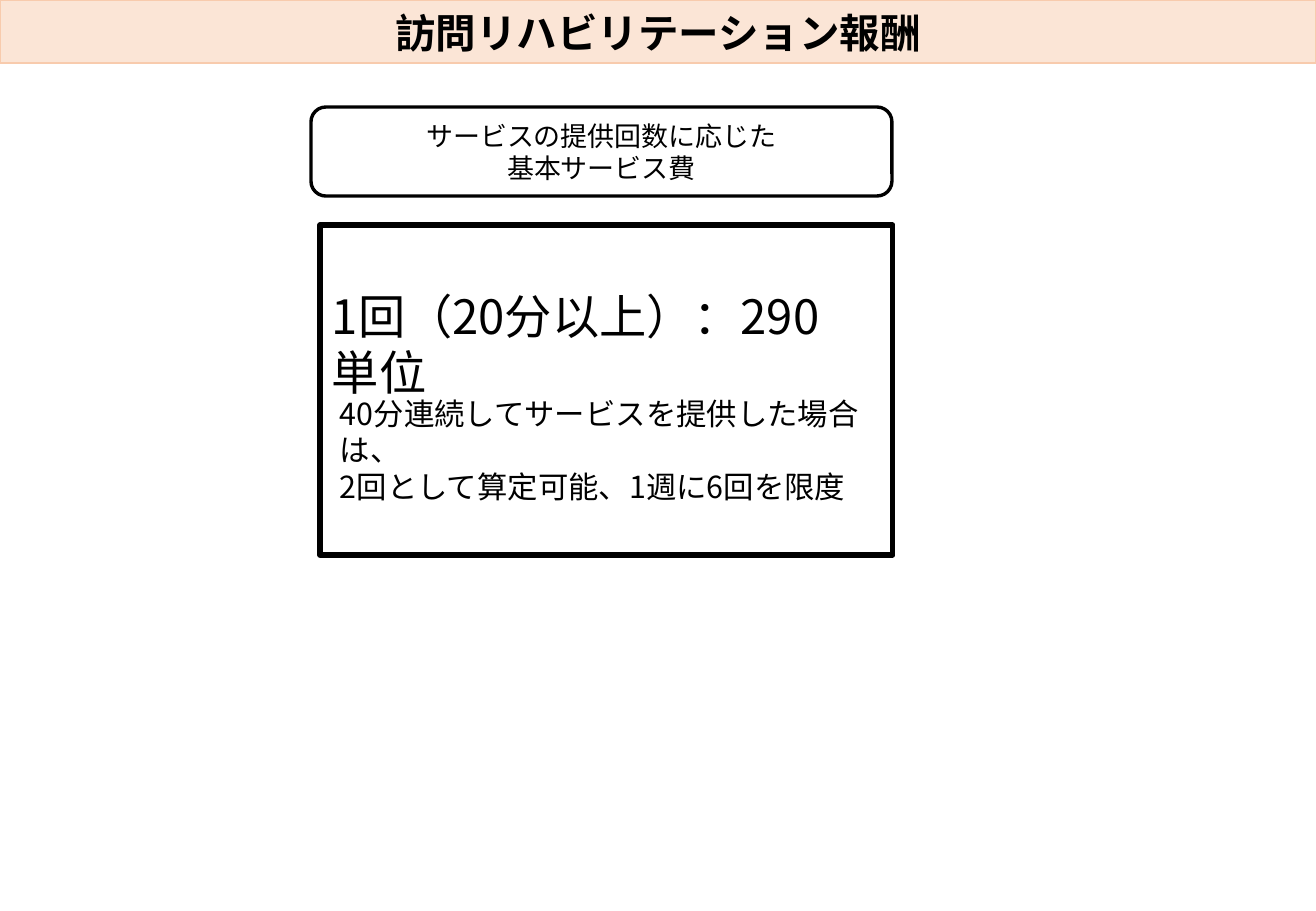
"""Build the home-visit rehabilitation fee slide."""
from lxml import etree
from pptx import Presentation
from pptx.dml.color import RGBColor
from pptx.enum.shapes import MSO_SHAPE
from pptx.enum.text import MSO_ANCHOR, MSO_AUTO_SIZE, PP_ALIGN
from pptx.oxml.ns import qn
from pptx.util import Pt

PX = 7526
RECT, ROUNDED = MSO_SHAPE.RECTANGLE, MSO_SHAPE.ROUNDED_RECTANGLE
TOP, MIDDLE, BOTTOM = MSO_ANCHOR.TOP, MSO_ANCHOR.MIDDLE, MSO_ANCHOR.BOTTOM
LEFT, CENTER = PP_ALIGN.LEFT, PP_ALIGN.CENTER
GROW = MSO_AUTO_SIZE.SHAPE_TO_FIT_TEXT
BLACK, WHITE = "000000", "FFFFFF"
GOTHIC = "Noto Sans CJK JP"


def color(value):
    return RGBColor.from_string(value)


def write(box, text, size, font, align, anchor, bold=False):
    frame = box.text_frame
    frame.text = text
    frame.word_wrap = True
    frame.vertical_anchor = anchor
    for para in frame.paragraphs:
        para.alignment = align
        for span in para.runs:
            span.font.size = Pt(size)
            span.font.name = font
            span.font.bold = bold
            span.font.color.rgb = color(BLACK)
            east_asian = etree.SubElement(span.font._element, qn("a:ea"))
            east_asian.set("typeface", font)


deck = Presentation()
deck.slide_width, deck.slide_height = 1316 * PX, 911 * PX
page = deck.slides.add_slide(deck.slide_layouts[6])

panels = []
for kind, bounds, fill, line, weight in [
    (RECT, (320, 225, 573, 330), WHITE, BLACK, 3),
    (RECT, (0, 0, 1316, 63), "FBE5D6", "F8CBAD", 1),
    (ROUNDED, (311, 107, 581, 89), None, BLACK, 2),
]:
    panel = page.shapes.add_shape(kind, *[length * PX for length in bounds])
    panel.shadow.inherit = False
    if fill:
        panel.fill.solid()
        panel.fill.fore_color.rgb = color(fill)
    else:
        panel.fill.background()
    panel.line.color.rgb = color(line)
    panel.line.width = Pt(weight)
    panels.append(panel)

fee_panel, title_bar, service_label = panels
write(title_bar, "訪問リハビリテーション報酬", 24, GOTHIC, CENTER, BOTTOM, bold=True)
write(service_label, "サービスの提供回数に応じた\n基本サービス費", 16, "Calibri", CENTER, MIDDLE)

for bounds, text, size in [
    ((320, 281, 526, 69), "1回（20分以上）：290単位", 28),
    ((328, 389, 564, 86),
     "40分連続してサービスを提供した場合は、\n2回として算定可能、1週に6回を限度", 18),
]:
    box = page.shapes.add_textbox(*[length * PX for length in bounds])
    write(box, text, size, GOTHIC, LEFT, TOP)
    box.text_frame.auto_size = GROW

deck.save("out.pptx")
